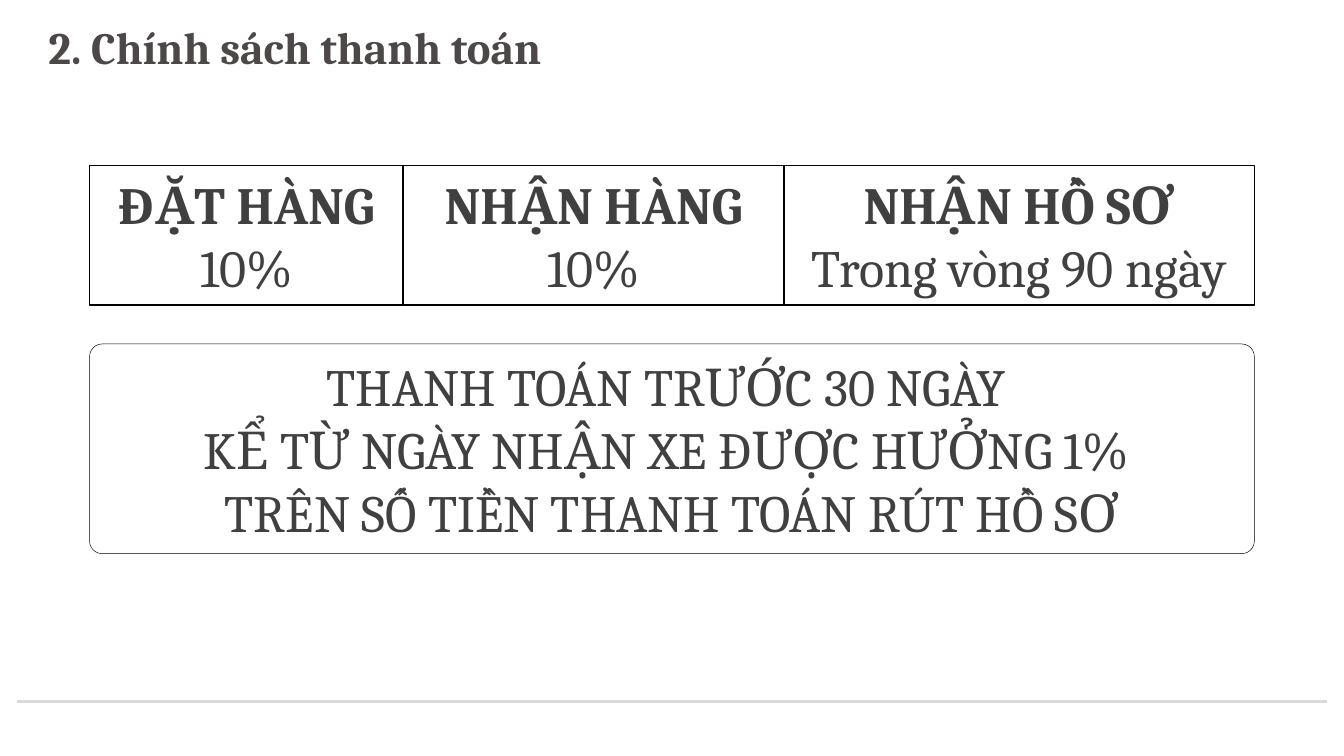
from pptx import Presentation
from pptx.dml.color import RGBColor as Rgb
from pptx.enum.shapes import MSO_CONNECTOR as Link, MSO_SHAPE as Kind
from pptx.enum.text import MSO_ANCHOR as Anchor, PP_ALIGN as Align
from pptx.oxml.ns import qn
from pptx.util import Inches, Pt
from lxml.etree import SubElement as Sub

TITLE = "2. Chính sách thanh toán"
STEPS = [
    (14, "ĐẶT HÀNG", "10%"),
    (17, "NHẬN HÀNG", "10%"),
    (21, "NHẬN HỒ SƠ", "Trong vòng 90 ngày"),
]
BONUS = [
    "THANH TOÁN TRƯỚC 30 NGÀY ",
    "KỂ TỪ NGÀY NHẬN XE ĐƯỢC HƯỞNG 1% ",
    "TRÊN SỐ TIỀN THANH TOÁN RÚT HỒ SƠ",
]
THEME = {
    "font": "Cambria", "head": "4B4847", "text": "404040",
    "edge": "000000", "rule": "D9D9D9", "fill": "FFFFFF",
    "big": 28, "title": 24,
}
WIDE = 10
HIGH = WIDE * 9 / 16
UNIT = WIDE / 60
LEFT, TOP, ROW, GAP = 4 * UNIT, 1.23, 1.04, 0.29


def color(name):
    return Rgb.from_string(THEME[name])


def write(shape, lines, size, tint, align, anchor):
    frame = shape.text_frame
    frame.word_wrap = True
    frame.vertical_anchor = anchor
    for i, (text, bold) in enumerate(lines):
        para = frame.add_paragraph() if i else frame.paragraphs[0]
        para.alignment = align
        run = para.add_run()
        run.text = text
        font = run.font
        font.name, font.size, font.bold = THEME["font"], Pt(THEME[size]), bold
        font.color.rgb = color(tint)


def panel(slide, kind, area, lines, width):
    shape = slide.shapes.add_shape(kind, *map(Inches, area))
    shape.shadow.inherit = False
    shape.line.color.rgb = color("edge")
    shape.line.width = Pt(width)
    write(shape, lines, "big", "text", Align.CENTER, Anchor.MIDDLE)
    return shape


def main():
    deck = Presentation()
    deck.slide_width, deck.slide_height = Inches(WIDE), Inches(HIGH)
    slide = deck.slides.add_slide(deck.slide_layouts[6])

    edge, base = WIDE / 80, 5.22
    rule = slide.shapes.add_connector(
        Link.STRAIGHT, *map(Inches, (edge, base, WIDE - edge, base)))
    rule.line.color.rgb = color("rule")
    rule.line.width = Pt(1.5)
    Sub(rule.element.spPr, qn("a:effectLst"))

    title = slide.shapes.add_textbox(*map(Inches, (0.36, 0.12, 6.67, 0.43)))
    frame = title.text_frame
    frame.margin_left = frame.margin_right = 0
    frame.margin_top = frame.margin_bottom = 0
    write(title, [(TITLE, True)], "title", "head", Align.LEFT, Anchor.BOTTOM)

    x = LEFT
    for span, name, term in STEPS:
        width = span * UNIT
        lines = [(name, True), (term, False)]
        cell = panel(slide, Kind.RECTANGLE, (x, TOP, width, ROW), lines, 0.75)
        cell.fill.background()
        x += width

    area = (LEFT, TOP + ROW + GAP, x - LEFT, 1.5 * ROW)
    lines = [(text, False) for text in BONUS]
    card = panel(slide, Kind.ROUNDED_RECTANGLE, area, lines, 0.25)
    card.adjustments[0] = 0.06
    card.fill.solid()
    card.fill.fore_color.rgb = color("fill")

    deck.save("out.pptx")


if __name__ == "__main__":
    main()
